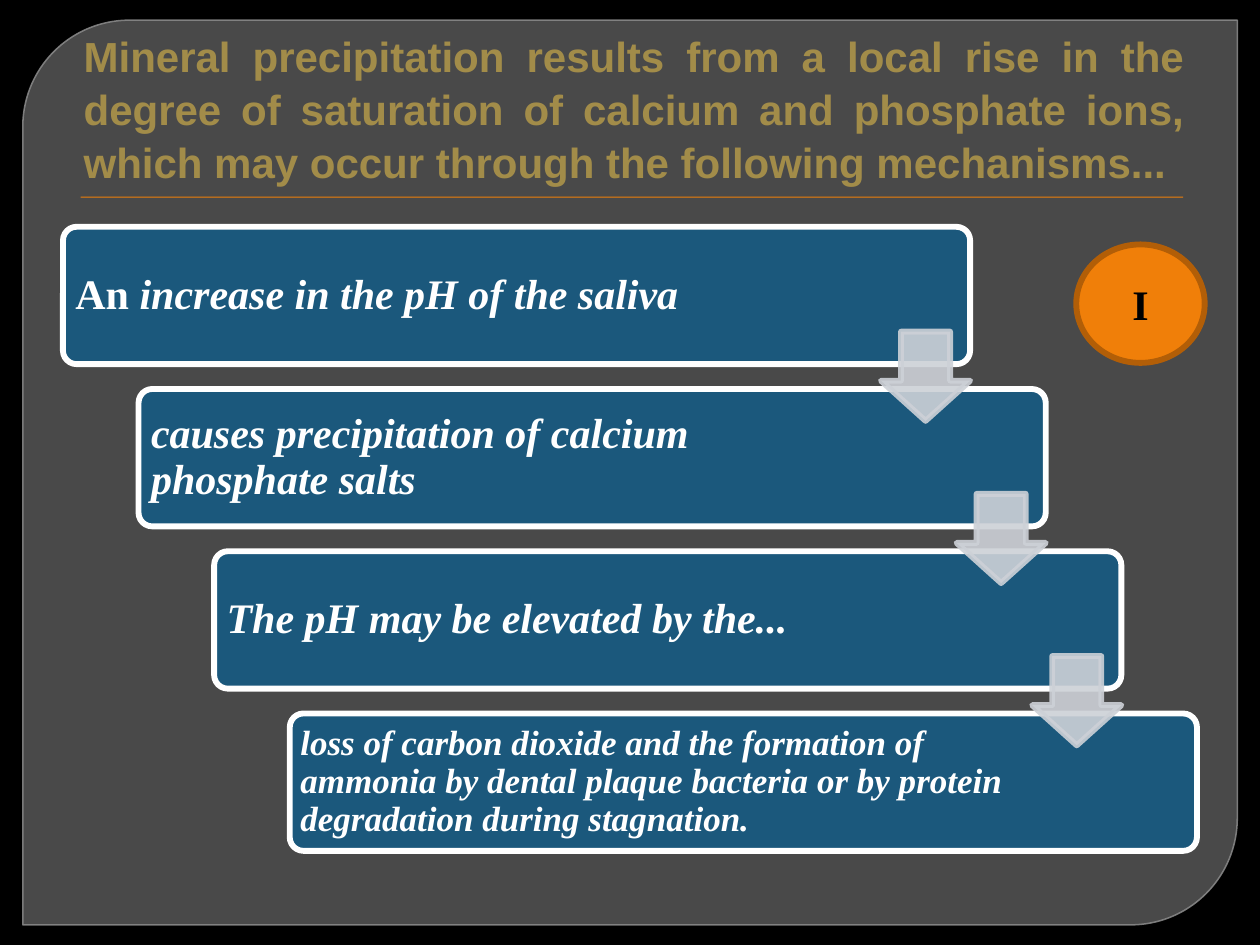
from dataclasses import dataclass
from pptx import Presentation
from pptx import util as u
from pptx.dml import color
from pptx.enum import shapes, text
from pptx.oxml import ns
from lxml import etree

Pt = u.Pt
Kind = shapes.MSO_SHAPE


@dataclass(frozen=True)
class Theme:
    back: str = "000000"
    panel: str = "717171"
    edge: str = "898989"
    gold: str = "FFC000"
    orange: str = "F07F09"
    rust: str = "B25E07"
    blue: str = "1B587C"
    white: str = "FFFFFF"
    pale: str = "CDD1D7"
    sans: str = "Arial"
    serif: str = "Times New Roman"
    big: int = 24
    small: int = 20
    line: float = 3.35


T = Theme()
STEPS = [
    ([("An ", False), ("increase in the pH of the saliva", True)], T.big),
    ([("causes precipitation of calcium phosphate salts", True)], T.big),
    ([("The pH may be elevated by the...", True)], T.big),
    ([("loss of carbon dioxide and the formation of ammonia by dental plaque "
       "bacteria or by protein degradation during stagnation.", True)], T.small),
]
TITLE = ("Mineral precipitation results from a local rise in the degree of "
         "saturation of calcium and phosphate ions, which may occur through "
         "the following mechanisms...")


def rgb(code):
    return color.RGBColor.from_string(code)


def paint(fill, code, alpha=100):
    fill.solid()
    fill.fore_color.rgb = rgb(code)
    if alpha < 100:
        tint = fill._xPr.find(".//" + ns.qn("a:srgbClr"))
        etree.SubElement(tint, ns.qn("a:alpha"), val=str(alpha * 1000))


def add_form(slide, kind, box, fill, line=None, width=T.line,
             adj=(), alpha=100, edge=100):
    form = slide.shapes.add_shape(kind, *map(Pt, box))
    form.shadow.inherit = False
    for i, val in enumerate(adj):
        form.adjustments[i] = val
    paint(form.fill, fill, alpha)
    if line:
        form.line.width = Pt(width)
        paint(form.line.fill, line, edge)
    else:
        form.line.fill.background()
    return form


def put_text(form, runs, size=T.big, font=T.serif, ink=T.white,
             align=text.PP_ALIGN.LEFT, anchor=text.MSO_ANCHOR.MIDDLE,
             space=1.0, pad=(7.2, 3.6)):
    frame = form.text_frame
    frame.word_wrap = True
    frame.auto_size = text.MSO_AUTO_SIZE.NONE
    frame.vertical_anchor = anchor
    frame.margin_left = frame.margin_right = Pt(pad[0])
    frame.margin_top = frame.margin_bottom = Pt(pad[1])
    para = frame.paragraphs[0]
    para.alignment = align
    para.line_spacing = space
    for words, slant in runs:
        run = para.add_run()
        run.text = words
        run.font.name = font
        run.font.size = Pt(size)
        run.font.bold = True
        run.font.italic = slant
        run.font.color.rgb = rgb(ink)
    return para


def add_title(slide):
    title = slide.shapes.title
    title.left, title.top, title.width, title.height = map(
        Pt, (36, 20.2, 648, 90))
    para = put_text(title, [(TITLE, False)], font=T.sans, ink=T.gold,
                    align=text.PP_ALIGN.JUSTIFY,
                    anchor=text.MSO_ANCHOR.BOTTOM, space=1.05)
    para._p.get_or_add_pPr().set("marL", str(Pt(4.6)))


def add_step(slide, i, runs, size):
    left, top = 36 + 43.2 * i, 129.6 + 92.7 * i
    add_form(slide, Kind.ROUNDED_RECTANGLE, (left, top, 518.4, 78.5),
             T.blue, T.white, adj=(0.1,))
    label = slide.shapes.add_textbox(*map(Pt, (left, top, 424.5, 78.5)))
    pad = 7.2 if size == T.big else 6
    put_text(label, runs, size=size, space=0.9, pad=(pad, pad))


def add_arrow(slide, i):
    add_form(slide, Kind.DOWN_ARROW,
             (503.4 + 43.2 * i, 189.5 + 92.7 * i, 51, 51),
             T.pale, T.pale, adj=(0.55, 0.45), alpha=90, edge=90)


def main():
    deck = Presentation()
    deck.slide_width, deck.slide_height = Pt(720), Pt(540)
    slide = deck.slides.add_slide(deck.slide_layouts[5])
    paint(slide.background.fill, T.back)
    add_form(slide, Kind.ROUND_2_DIAG_RECTANGLE, (13, 11.5, 694, 517),
             T.panel, T.edge, width=0.87, adj=(0.118, 0), alpha=65, edge=88)
    add_form(slide, Kind.RECTANGLE, (46.1, 112.3, 630, 0.7), T.orange)
    add_title(slide)
    for i, (runs, size) in enumerate(STEPS):
        add_step(slide, i, runs, size)
    for i in range(len(STEPS) - 1):
        add_arrow(slide, i)
    badge = add_form(slide, Kind.OVAL, (615, 139.7, 73.4, 67.7),
                     T.orange, T.rust)
    put_text(badge, [("I", False)], ink=T.back, align=text.PP_ALIGN.CENTER)
    deck.save("out.pptx")


if __name__ == "__main__":
    main()
